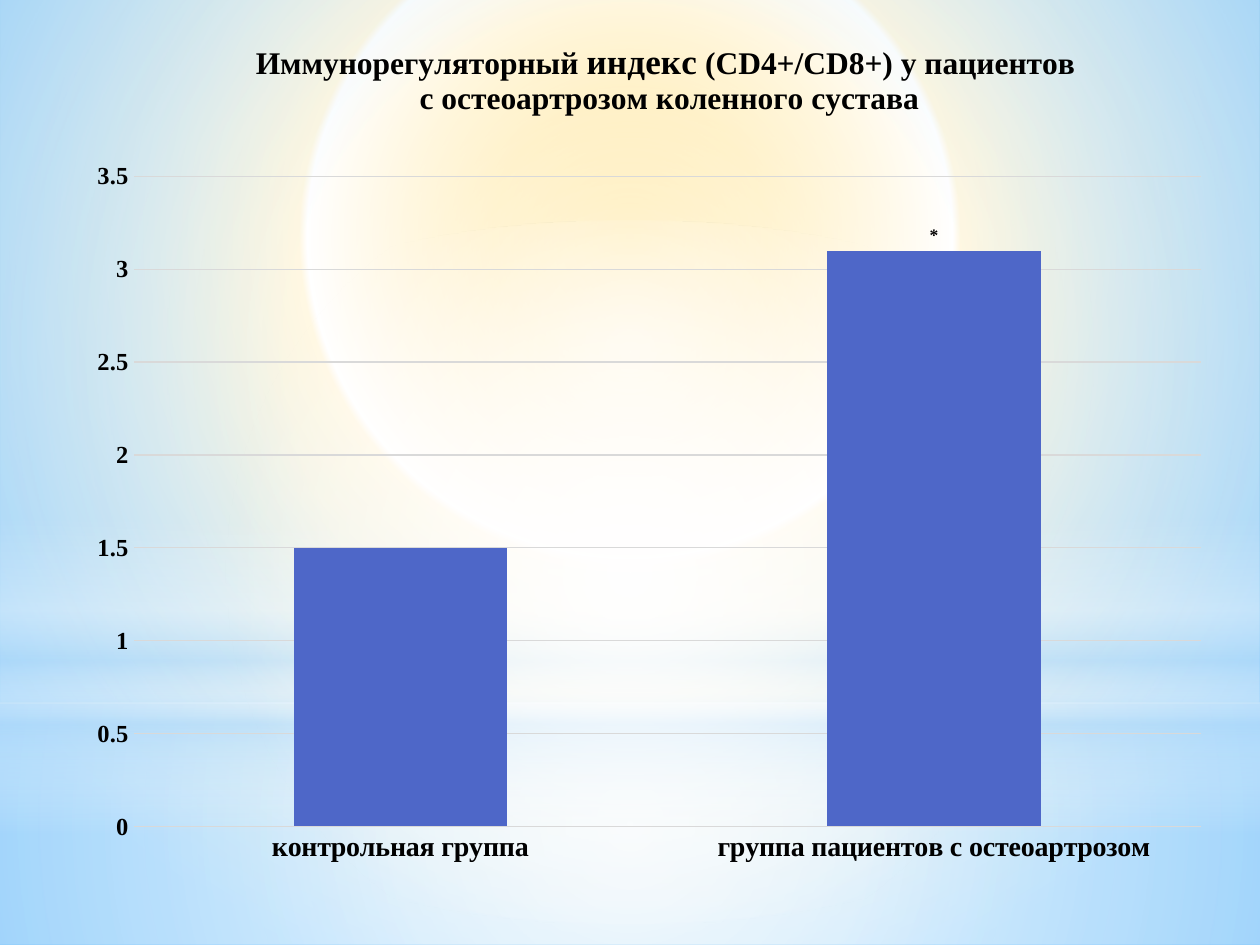
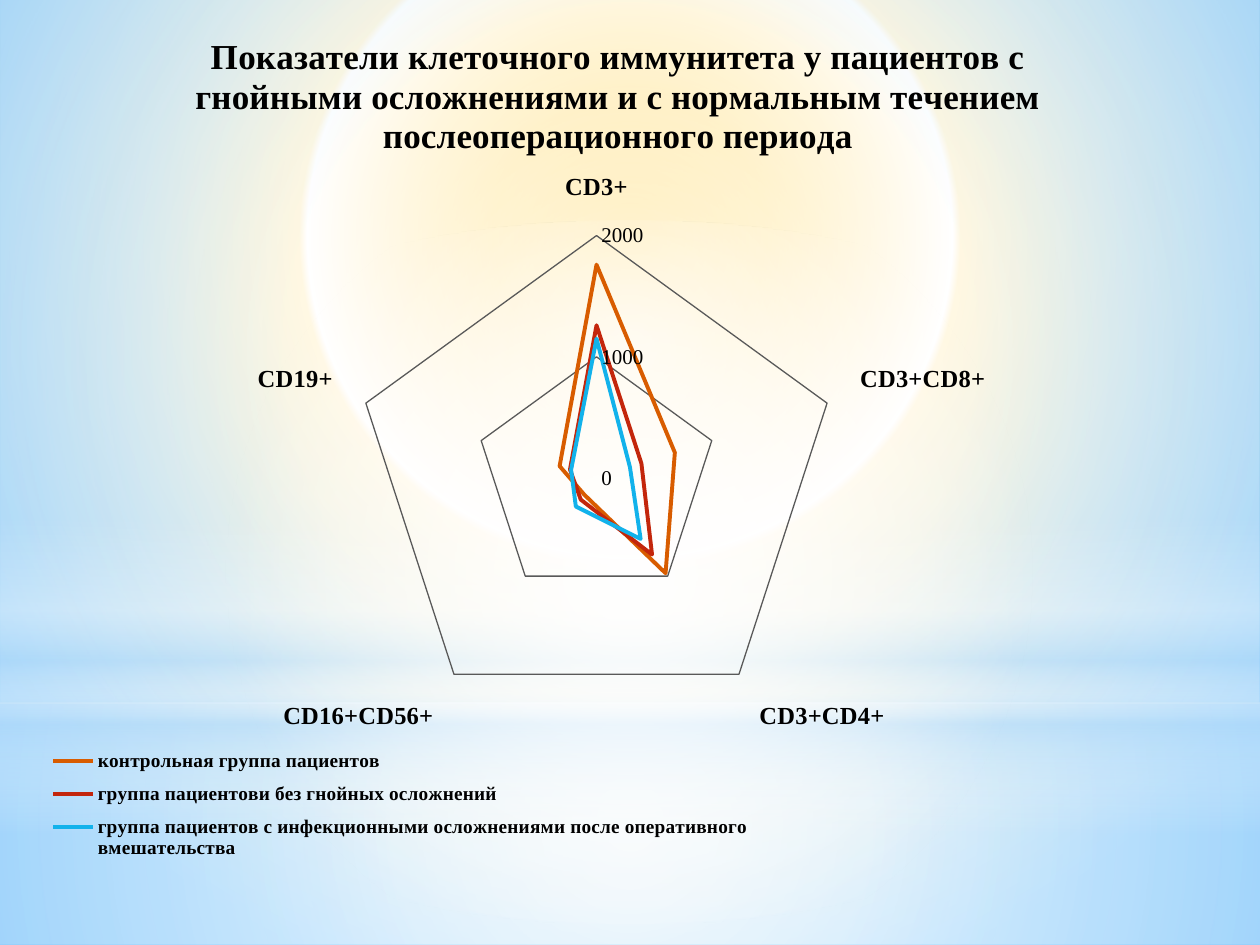
"""Build two slides of immunity charts over a shared sunrise backdrop."""
from dataclasses import dataclass

from lxml import etree
from pptx import Presentation
from pptx import util as u
from pptx.chart.data import CategoryChartData
from pptx.dml.color import RGBColor
from pptx.enum import chart as ch
from pptx.enum import shapes
from pptx.oxml import ns


@dataclass(frozen=True)
class Theme:
    text: str = "000000"
    bar: str = "4E67C8"
    pale_grid: str = "D9D9D9"
    dark_grid: str = "595959"
    control: str = "D85C00"
    healthy: str = "C3260C"
    infected: str = "12B2EB"
    white: str = "FFFFFF"
    sky: str = "B4DCFA"
    sun: tuple = ((0, "FFC000"), (17, "FFD248"), (41, "FFFFFF"),
                  (42, "FFECB2"), (100, "5BB9FF"))
    base_font: str = "Lato"
    font: str = "Times New Roman"
    base: int = 10
    legend: int = 11
    scale: int = 12
    axis: int = 14
    category: int = 16
    title: int = 18
    large: int = 20


THEME = Theme()
CENTRE = (50, 50, 50, 50)


class Deck:
    def __init__(self, theme):
        self.theme = theme
        self.presentation = Presentation()
        self.presentation.slide_width = u.Inches(10)
        self.presentation.slide_height = u.Inches(7.5)
        self.slide = None
        self.chart_box = None

    def add_slide(self):
        t = self.theme
        self.slide = self.presentation.slides.add_slide(self.presentation.slide_layouts[6])
        self.slide.background.fill.gradient()
        self.gradient(self.slide._element, t.sun, focus=(20, 10, 20, 60))
        rect, oval = shapes.MSO_SHAPE.RECTANGLE, shapes.MSO_SHAPE.OVAL
        water = ((0, t.white, 91), (37, t.white, 76), (100, t.sky, 79))
        sky = ((0, t.white, 89), (48, t.white, 62), (100, t.sky, 79))
        horizon = ((0, t.white, 0), (29, t.white, 30), (45, t.sky, 40),
                   (55, t.white, 26), (65, t.sky, 60), (100, t.white, 0))
        glow = ((0, t.white), (56, t.white, 0))
        self.haze(rect, 5.58, 1.92, water, CENTRE)
        self.haze(rect, 0, 5.58, sky, CENTRE)
        self.haze(rect, 4.12, 2.5, horizon)
        self.haze(oval, 1.75, 5.58, glow, CENTRE)

    def haze(self, preset, top, height, stops, focus=None):
        layer = self.slide.shapes.add_shape(
            preset, 0, u.Inches(top), u.Inches(10), u.Inches(height))
        layer.shadow.inherit = False
        layer.line.fill.background()
        layer.fill.gradient()
        self.gradient(layer._element, stops, focus)

    def gradient(self, owner, stops, focus=None):
        grad = owner.find(".//" + ns.qn("a:gradFill"))
        for child in list(grad):
            grad.remove(child)
        stop_list = etree.SubElement(grad, ns.qn("a:gsLst"))
        for position, colour, *opacity in stops:
            stop = etree.SubElement(stop_list, ns.qn("a:gs"), pos=str(position * 1000))
            rgb = etree.SubElement(stop, ns.qn("a:srgbClr"), val=colour)
            if opacity:
                etree.SubElement(rgb, ns.qn("a:alpha"), val=str(opacity[0] * 1000))
        if focus:
            circle = etree.SubElement(grad, ns.qn("a:path"), path="circle")
            sides = {side: str(share * 1000) for side, share in zip("ltrb", focus)}
            etree.SubElement(circle, ns.qn("a:fillToRect"), **sides)
        else:
            etree.SubElement(grad, ns.qn("a:lin"), ang="5400000", scaled="0")

    def style(self, font, size, bold=True, name=None):
        font.name = name or self.theme.font
        font.size = u.Pt(size)
        font.bold = bold
        font.color.rgb = RGBColor.from_string(self.theme.text)

    def place(self, part, index, x, y, *size):
        left, top, width, height = self.chart_box
        for old in part.findall(ns.qn("c:layout")):
            part.remove(old)
        layout = etree.Element(ns.qn("c:layout"))
        manual = etree.SubElement(layout, ns.qn("c:manualLayout"))
        if index == 0:
            etree.SubElement(manual, ns.qn("c:layoutTarget"), val="inner")
        for axis in "xy":
            etree.SubElement(manual, ns.qn(f"c:{axis}Mode"), val="edge")
        lengths = (x - left, y - top, *size)
        for key, length, whole in zip("xywh", lengths, (width, height) * 2):
            etree.SubElement(manual, ns.qn(f"c:{key}"), val=f"{length / whole:.4f}")
        part.insert(index, layout)

    def chart(self, kind, box, categories, series, plot):
        self.chart_box = box
        data = CategoryChartData()
        data.categories = categories
        for name, values, _ in series:
            data.add_series(name, values)
        chart = self.slide.shapes.add_chart(kind, *map(u.Inches, box), data).chart
        self.style(chart.font, self.theme.base, bold=False, name=self.theme.base_font)
        chart.has_legend = False
        self.place(chart._chartSpace.chart.plotArea, 0, *plot)
        return chart

    def title(self, chart, lines, x, y):
        chart.has_title = True
        frame = chart.chart_title.text_frame
        for number, line in enumerate(lines):
            paragraph = frame.add_paragraph() if number else frame.paragraphs[0]
            for wording, size in line:
                run = paragraph.add_run()
                run.text = wording
                self.style(run.font, size)
        self.place(chart.chart_title._element, 1, x, y)

    def axes(self, chart, category_size, scale_size, scale_bold, top, step, grid):
        category, scale = chart.category_axis, chart.value_axis
        for axis in (category, scale):
            axis.major_tick_mark = axis.minor_tick_mark = ch.XL_TICK_MARK.NONE
            axis.format.line.fill.background()
        category.has_major_gridlines = False
        scale.minimum_scale, scale.maximum_scale, scale.major_unit = 0, top, step
        scale.has_major_gridlines = True
        self.line(scale.major_gridlines.format.line, grid, 0.75)
        self.style(category.tick_labels.font, category_size)
        self.style(scale.tick_labels.font, scale_size, bold=scale_bold)

    def line(self, line, colour, width):
        line.color.rgb = RGBColor.from_string(colour)
        line.width = u.Pt(width)

    def legend(self, chart, *box):
        chart.has_legend = True
        chart.legend.position = ch.XL_LEGEND_POSITION.TOP
        chart.legend.include_in_layout = False
        self.style(chart.legend.font, self.theme.legend)
        self.place(chart.legend._element, 1, *box)


def index_slide(deck):
    t = deck.theme
    deck.add_slide()
    index = deck.chart(
        ch.XL_CHART_TYPE.COLUMN_CLUSTERED, (0.59, 0.29, 9.13, 6.69),
        ("контрольная группа", "группа пациентов с остеоартрозом"),
        [("Series 1", (1.5, 3.1), t.bar)], (1.06, 1.4, 8.47, 5.16))
    deck.title(index, [
        [("Иммунорегуляторный ", t.title), ("индекс", t.large),
         (" (CD4+/CD8+) у пациентов", t.title)],
        [(" с остеоартрозом коленного сустава", t.title)]], x=2, y=0.28)
    deck.axes(index, t.category, t.axis, True, 3.5, 0.5, t.pale_grid)
    plot = index.plots[0]
    plot.gap_width = 150
    plot.vary_by_categories = False
    bars = plot.series[0]
    bars.format.fill.solid()
    bars.format.fill.fore_color.rgb = RGBColor.from_string(t.bar)
    significance = bars.points[1].data_label
    star = significance.text_frame.paragraphs[0].add_run()
    star.text = "*"
    deck.style(star.font, t.base)
    significance.position = ch.XL_LABEL_POSITION.OUTSIDE_END


def immunity_slide(deck):
    t = deck.theme
    deck.add_slide()
    groups = [
        ("контрольная группа пациентов", (1760, 680, 970, 170, 320), t.control),
        ("группа пациентови без гнойных осложнений", (1260, 390, 780, 220, 230), t.healthy),
        ("группа пациентов с инфекционными осложнениями после оперативного вмешательства",
         (1150, 290, 620, 290, 220), t.infected)]
    radar = deck.chart(
        ch.XL_CHART_TYPE.RADAR, (0.28, 0.21, 9.45, 7.19),
        ("СD3+", "СD3+СD8+", "СD3+СD4+", "СD16+СD56+", "СD19+"),
        groups, (2.81, 1.73, 3.85, 4.13))
    deck.title(radar, [[(
        "Показатели клеточного иммунитета у пациентов с гнойными осложнениями "
        "и с нормальным течением послеоперационного периода", t.large)]], x=1.5, y=0.22)
    deck.axes(radar, t.axis, t.scale, False, 2000, 1000, t.dark_grid)
    deck.line(radar.category_axis.format.line, t.pale_grid, 0.75)
    radar.plots[0].vary_by_categories = False
    for group, (_, _, colour) in zip(radar.plots[0].series, groups):
        deck.line(group.format.line, colour, 2.25)
        group.marker.style = ch.XL_MARKER_STYLE.NONE
        group.smooth = False
    deck.legend(radar, 0.33, 5.86, 5.7, 1.05)


def main():
    deck = Deck(THEME)
    index_slide(deck)
    immunity_slide(deck)
    deck.presentation.save("out.pptx")


if __name__ == "__main__":
    main()
